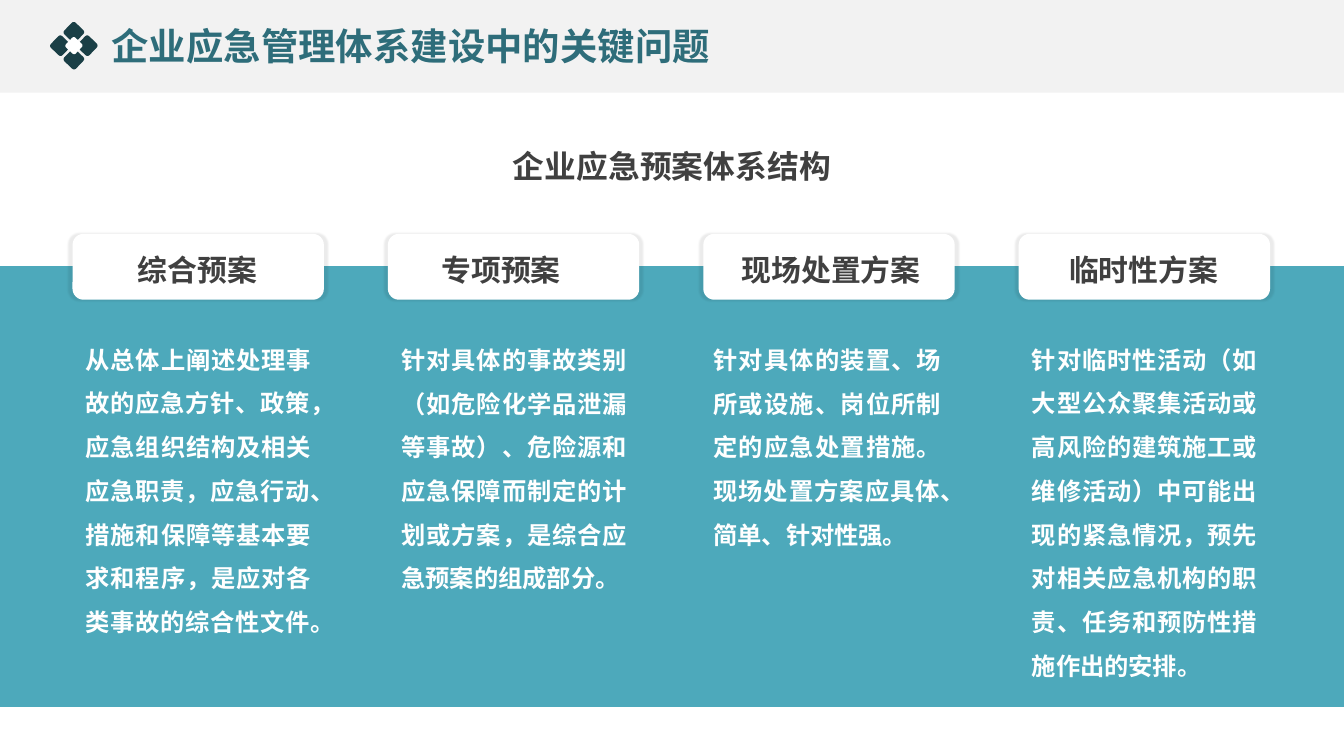
import lxml.etree
import pptx
import pptx.dml.color
import pptx.enum.shapes
import pptx.enum.text
import pptx.oxml.ns
import pptx.util

FONT = "Noto Sans CJK SC"
TITLE = "企业应急管理体系建设中的关键问题"
SUBTITLE = "企业应急预案体系结构"
# heading, heading left and width, body left and width, body text
PLANS = [
    ("综合预案", 0.77, 1.4, 0.54, 1.87,
     "从总体上阐述处理事故的应急方针、政策，应急组织结构及相关应急职责，"
     "应急行动、措施和保障等基本要求和程序，是应对各类事故的综合性文件。"),
    ("专项预案", 3.03, 1.4, 2.89, 1.87,
     "针对具体的事故类别（如危险化学品泄漏等事故）、危险源和应急保障"
     "而制定的计划或方案，是综合应急预案的组成部分。"),
    ("现场处置方案", 5.38, 1.61, 5.21, 1.89,
     "针对具体的装置、场所或设施、岗位所制定的应急处置措施。"
     "现场处置方案应具体、简单、针对性强。"),
    ("临时性方案", 7.81, 1.4, 7.58, 1.87,
     "针对临时性活动（如大型公众聚集活动或高风险的建筑施工或维修活动）中"
     "可能出现的紧急情况，预先对相关应急机构的职责、任务和预防性措施作出的安排。"),
]
W = 10
H = W * 9 / 16
CARD_LEFT, CARD_TOP, CARD_W, CARD_H = 0.54, 1.74, 1.87, 0.49
PITCH = (7.58 - CARD_LEFT) / (len(PLANS) - 1)
BODY_TOP, LINE_H, BODY_PAD = 2.41, 0.33, 0.1
ICON_X, ICON_Y, ICON_STEP = 0.55, 0.34, 0.1

SHAPE = pptx.enum.shapes.MSO_SHAPE
ALIGN = pptx.enum.text.PP_ALIGN
inch = pptx.util.Inches


def rgb(color):
    return pptx.dml.color.RGBColor.from_string(color)


def add_block(s, kind, left, top, width, height, color, angle=0):
    sp = s.shapes.add_shape(kind, inch(left), inch(top), inch(width), inch(height))
    sp.shadow.inherit = False
    sp.fill.solid()
    sp.fill.fore_color.rgb = rgb(color)
    sp.line.fill.background()
    sp.rotation = angle
    return sp


def add_halo(sp):
    """Give a card a faint shadow slightly larger than itself."""
    qn = pptx.oxml.ns.qn
    effects = sp.element.spPr.find(qn("a:effectLst"))
    shadow = lxml.etree.SubElement(effects, qn("a:outerShdw"), blurRad="12700",
                                   sx="103000", sy="102000", algn="ctr",
                                   rotWithShape="0")
    color = lxml.etree.SubElement(shadow, qn("a:srgbClr"), val="000000")
    lxml.etree.SubElement(color, qn("a:alpha"), val="8000")


def write(sp, text, size, color, align, spacing=1.0):
    tf = sp.text_frame
    tf.word_wrap = True
    tf.auto_size = pptx.enum.text.MSO_AUTO_SIZE.NONE
    tf.vertical_anchor = pptx.enum.text.MSO_ANCHOR.TOP
    tf.text = text
    p = tf.paragraphs[0]
    p.alignment = align
    p.line_spacing = spacing
    r = p.runs[0]
    r.font.size = pptx.util.Pt(size)
    r.font.bold = True
    r.font.name = FONT
    r.font.color.rgb = rgb(color)
    qn = pptx.oxml.ns.qn
    latin = next(p._p.iter(qn("a:latin")))
    latin.addnext(lxml.etree.Element(qn("a:ea"), typeface=FONT))


def add_text(s, left, top, width, height, *style):
    sp = s.shapes.add_textbox(inch(left), inch(top), inch(width), inch(height))
    write(sp, *style)


def add_icon(s):
    tiles = [(0, -1), (-1, 0), (1, 0), (0, 1)]
    for dx, dy in tiles:
        add_block(s, SHAPE.ROUNDED_RECTANGLE, ICON_X + dx * ICON_STEP - 0.06,
                  ICON_Y + dy * ICON_STEP - 0.06, 0.12, 0.12, "1A3F46", 43.8)
    add_block(s, SHAPE.ROUNDED_RECTANGLE, ICON_X - 0.05, ICON_Y - 0.05,
              0.1, 0.1, "FFFFFF", 43.8)


def main():
    prs = pptx.Presentation()
    prs.slide_width, prs.slide_height = inch(W), inch(H)
    s = prs.slides.add_slide(prs.slide_layouts[5])

    add_block(s, SHAPE.RECTANGLE, 0, 0, W, 0.69, "F2F2F2")
    add_icon(s)
    add_block(s, SHAPE.RECTANGLE, -0.01, 1.98, W + 0.01, 3.28, "4DA9BB")

    title = s.shapes.title
    title.left, title.top = inch(0.73), inch(0.12)
    title.width, title.height = inch(7.13), inch(0.44)
    write(title, TITLE, 20, "2E6D7A", ALIGN.LEFT)
    title.element.getparent().append(title.element)  # bring in front of the band

    add_text(s, 3.61, 1.04, 2.78, 0.39, SUBTITLE, 17, "404040", ALIGN.CENTER)

    for i, (name, name_left, name_w, left, width, body) in enumerate(PLANS):
        card = add_block(s, SHAPE.ROUNDED_RECTANGLE, CARD_LEFT + i * PITCH,
                         CARD_TOP, CARD_W, CARD_H, "FFFFFF")
        add_halo(card)
        add_text(s, name_left, 1.82, name_w, 0.37, name, 16, "404040", ALIGN.CENTER)
        lines = -(-len(body) // 9)
        add_text(s, left, BODY_TOP, width, BODY_PAD + lines * LINE_H,
                 body, 13, "FFFFFF", ALIGN.JUSTIFY, 1.5)

    prs.save("out.pptx")


if __name__ == "__main__":
    main()
